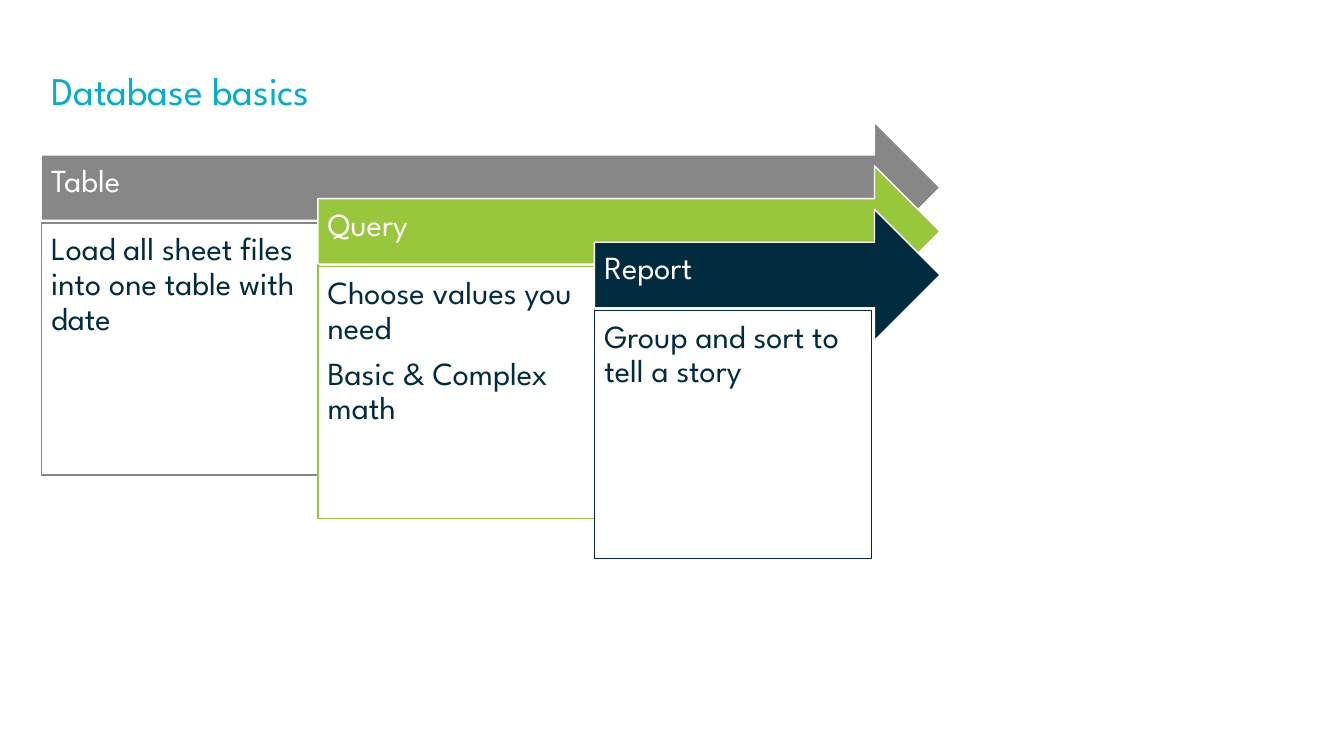
from dataclasses import dataclass

import pptx
import pptx.dml.color
import pptx.enum.shapes
import pptx.enum.text
import pptx.util
from pptx.util import Cm


@dataclass(frozen=True)
class Theme:
    font: str = "League Spartan"
    title_size: int = 28
    text_size: int = 23
    title: str = "00AECD"
    white: str = "FFFFFF"
    navy: str = "012C40"
    green: str = "98C73B"
    gray: str = "878787"


@dataclass(frozen=True)
class Step:
    name: str
    details: tuple[str, ...]
    color: str
    box_height: float = 6.35


THEME = Theme()
STEPS = (
    Step("Table", ("Load all sheet files into one table with date",), THEME.gray),
    Step("Query", ("Choose values you need", "Basic & Complex math"), THEME.green),
    Step("Report", ("Group and sort to tell a story",), THEME.navy, 6.25),
)
LEFT, TOP, RIGHT = 1.04, 3.08, 23.69
STEP_X, STEP_Y = 6.97, 1.1
ARROW_HEIGHT, BOX_OFFSET, BOX_WIDTH = 3.3, 2.54, 6.98
INSET = 0.25


def rgb(color: str) -> pptx.dml.color.RGBColor:
    return pptx.dml.color.RGBColor.from_string(color)


def write(sp, lines: tuple[str, ...], size: int, color: str, space_after: int = 0) -> None:
    tf = sp.text_frame
    tf.word_wrap = True
    tf.text = "\n".join(lines)
    for p in tf.paragraphs:
        p.alignment = pptx.enum.text.PP_ALIGN.LEFT
        p.line_spacing = 0.9
        p.space_after = pptx.util.Pt(space_after)
        p.font.name = THEME.font
        p.font.size = pptx.util.Pt(size)
        p.font.color.rgb = rgb(color)


def add_panel(s, kind, x: float, y: float, w: float, h: float, fill: str, line: str):
    sp = s.shapes.add_shape(kind, Cm(x), Cm(y), Cm(w), Cm(h))
    sp.shadow.inherit = False
    sp.fill.solid()
    sp.fill.fore_color.rgb = rgb(fill)
    sp.line.color.rgb = rgb(line)
    sp.line.width = pptx.util.Pt(1)
    tf = sp.text_frame
    tf.margin_left = tf.margin_top = tf.margin_right = tf.margin_bottom = Cm(INSET)
    return sp


def add_step(s, step: Step, index: int) -> None:
    shapes = pptx.enum.shapes.MSO_SHAPE
    x, y = LEFT + index * STEP_X, TOP + index * STEP_Y

    arrow = add_panel(s, shapes.RIGHT_ARROW, x, y, RIGHT - x, ARROW_HEIGHT, step.color, THEME.white)
    arrow.text_frame.margin_right = Cm(0.71)
    arrow.text_frame.margin_bottom = Cm(0.53)
    arrow.text_frame.vertical_anchor = pptx.enum.text.MSO_ANCHOR.MIDDLE
    write(arrow, (step.name,), THEME.text_size, THEME.white, 8)

    box = add_panel(s, shapes.RECTANGLE, x, y + BOX_OFFSET, BOX_WIDTH, step.box_height, THEME.white, step.color)
    box.text_frame.vertical_anchor = pptx.enum.text.MSO_ANCHOR.TOP
    write(box, step.details, THEME.text_size, THEME.navy, 8)


def add_title(s, text: str) -> None:
    sp = s.shapes.title
    sp.left, sp.top, sp.width, sp.height = Cm(LEFT), Cm(1.4), Cm(29.21), Cm(1.88)
    sp.text_frame.vertical_anchor = pptx.enum.text.MSO_ANCHOR.MIDDLE
    write(sp, (text,), THEME.title_size, THEME.title)


def main() -> None:
    prs = pptx.Presentation()
    prs.slide_width, prs.slide_height = Cm(33.87), Cm(19.05)
    s = prs.slides.add_slide(prs.slide_layouts[5])
    add_title(s, "Database basics")
    for index, step in enumerate(STEPS):
        add_step(s, step, index)
    prs.save("out.pptx")


if __name__ == "__main__":
    main()
